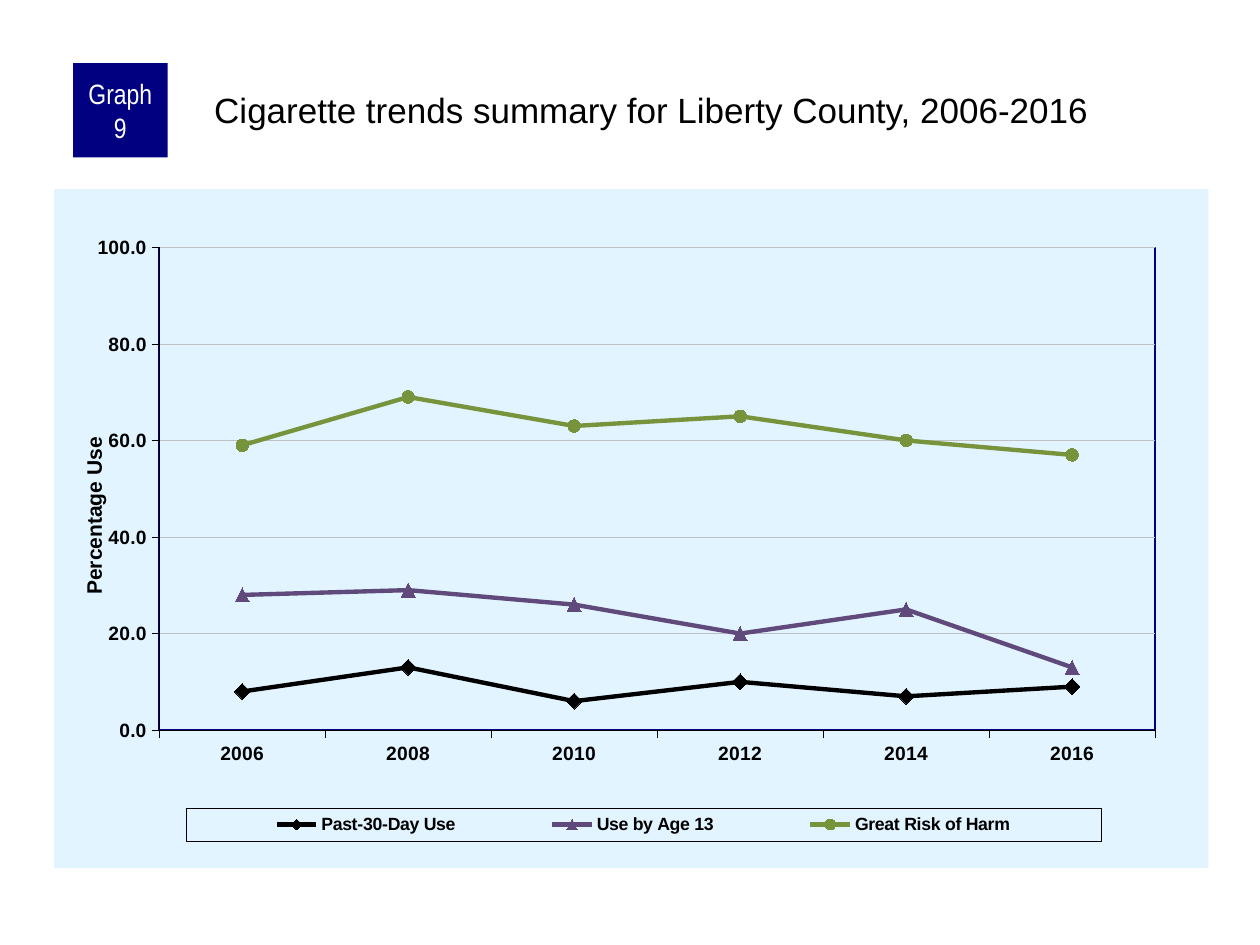
from lxml import etree
from pptx import Presentation
from pptx.chart.data import CategoryChartData
from pptx.dml.color import RGBColor
from pptx.enum import chart as chart_enum, shapes, text
from pptx.oxml import ns
from pptx.util import Inches, Pt

COLORS = {
    "navy": "000080", "white": "FFFFFF", "black": "000000", "panel": "E1F4FF",
    "grid": "C0C0C0", "purple": "604A7B", "green": "77933C",
}
YEARS = ["2006", "2008", "2010", "2012", "2014", "2016"]
MARKER = chart_enum.XL_MARKER_STYLE
SERIES = [
    ("Past-30-Day Use", [8, 13, 6, 10, 7, 9], "black", MARKER.DIAMOND, 9),
    ("Use by Age 13", [28, 29, 26, 20, 25, 13], "purple", MARKER.TRIANGLE, 8),
    ("Great Risk of Harm", [59, 69, 63, 65, 60, 57], "green", MARKER.CIRCLE, 7),
]


def color(name):
    return RGBColor.from_string(COLORS[name])


def set_font(font, size, color_name="black", bold=False, name="Arial"):
    font.name, font.size, font.bold = name, Pt(size), bold
    font.color.rgb = color(color_name)


def set_fill(fill, color_name):
    fill.solid()
    fill.fore_color.rgb = color(color_name)


def set_line(line, color_name, width):
    line.color.rgb = color(color_name)
    line.width = Pt(width)


def set_margins(frame, left, top, right, bottom):
    frame.margin_left, frame.margin_top = Inches(left), Inches(top)
    frame.margin_right, frame.margin_bottom = Inches(right), Inches(bottom)


def set_layout(element, **values):
    """Place a chart part by fractions of the chart area."""
    for old in element.findall(ns.qn("c:layout")):
        element.remove(old)
    layout = etree.Element(ns.qn("c:layout"))
    manual = etree.SubElement(layout, ns.qn("c:manualLayout"))
    if element.tag == ns.qn("c:plotArea"):
        etree.SubElement(manual, ns.qn("c:layoutTarget"), val="inner")
    for key in ("x", "y"):
        etree.SubElement(manual, ns.qn(f"c:{key}Mode"), val="edge")
    for key, value in values.items():
        etree.SubElement(manual, ns.qn(f"c:{key}"), val=str(value))
    before = element.find(ns.qn("c:legendPos"))
    if before is None:
        before = element.find(ns.qn("c:tx"))
    if before is None:
        element.insert(0, layout)
    else:
        before.addnext(layout)


def add_shape_properties(element, fill=None, line=None, width=0):
    """Fill and outline a chart part that has no public format object."""
    properties = etree.Element(ns.qn("c:spPr"))
    if fill:
        solid = etree.SubElement(properties, ns.qn("a:solidFill"))
        etree.SubElement(solid, ns.qn("a:srgbClr"), val=COLORS[fill])
    outline = etree.SubElement(properties, ns.qn("a:ln"), w=str(Pt(width)))
    if line:
        solid = etree.SubElement(outline, ns.qn("a:solidFill"))
        etree.SubElement(solid, ns.qn("a:srgbClr"), val=COLORS[line])
    else:
        etree.SubElement(outline, ns.qn("a:noFill"))
    following = element.find(ns.qn("c:txPr"))
    if following is None:
        element.append(properties)
    else:
        following.addprevious(properties)


def add_badge(slide, left, top, width, height):
    badge = slide.shapes.add_shape(
        shapes.MSO_SHAPE.RECTANGLE, left, top, width, height)
    badge.shadow.inherit = False
    set_fill(badge.fill, "navy")
    badge.line.fill.background()
    frame = badge.text_frame
    set_margins(frame, 0.05, 0, 0.05, 0)
    frame.word_wrap = True
    frame.vertical_anchor = text.MSO_ANCHOR.MIDDLE
    frame.text = "Graph 9"
    frame.paragraphs[0].alignment = text.PP_ALIGN.CENTER
    set_font(frame.paragraphs[0].runs[0].font, 16, "white", name="Arial Narrow")


def place_title(slide, left, top, width, height):
    title = slide.shapes.title
    title.left, title.top, title.width, title.height = left, top, width, height
    frame = title.text_frame
    set_margins(frame, 0.03, 0.03, 0, 0)
    frame.vertical_anchor = text.MSO_ANCHOR.TOP
    frame.text = "Cigarette trends summary for Liberty County, 2006-2016"
    frame.paragraphs[0].alignment = text.PP_ALIGN.LEFT
    set_font(frame.paragraphs[0].runs[0].font, 20)


def format_axes(chart):
    for axis in (chart.category_axis, chart.value_axis):
        axis.major_tick_mark = chart_enum.XL_TICK_MARK.OUTSIDE
        axis.minor_tick_mark = chart_enum.XL_TICK_MARK.NONE
        set_line(axis.format.line, "black", 0.25)
        set_font(axis.tick_labels.font, 11, bold=True)
    value_axis = chart.value_axis
    value_axis.minimum_scale, value_axis.maximum_scale = 0, 100
    value_axis.major_unit = 20
    set_line(value_axis.major_gridlines.format.line, "grid", 0.25)
    value_axis.tick_labels.number_format = "0.0"
    value_axis.tick_labels.number_format_is_linked = False
    title = value_axis.axis_title
    title.text_frame.text = "Percentage Use"
    set_font(title.text_frame.paragraphs[0].runs[0].font, 12, bold=True)
    set_layout(title._element, x=0.02, y=0.36)


def format_legend(chart):
    chart.has_legend = True
    legend = chart.legend
    legend.position = chart_enum.XL_LEGEND_POSITION.RIGHT
    legend.include_in_layout = False
    set_font(legend.font, 10.1, bold=True)
    set_layout(legend._element, x=0.114, y=0.912, w=0.793, h=0.048)
    add_shape_properties(legend._element, line="black", width=0.25)


def add_trend_chart(slide, left, top, width, height):
    data = CategoryChartData(number_format="0.0")
    data.categories = YEARS
    for name, values, *_ in SERIES:
        data.add_series(name, values)
    chart = slide.shapes.add_chart(
        chart_enum.XL_CHART_TYPE.LINE_MARKERS, left, top, width, height, data).chart
    chart.has_title = False
    set_font(chart.font, 8)
    add_shape_properties(chart._chartSpace, fill="panel")
    plot = chart.plots[0]
    plot.vary_by_categories = False
    for series, (_, _, color_name, marker, size) in zip(plot.series, SERIES):
        series.smooth = False
        set_line(series.format.line, color_name, 2.5)
        series.marker.style, series.marker.size = marker, size
        set_fill(series.marker.format.fill, color_name)
        set_line(series.marker.format.line, color_name, 0.75)
    format_axes(chart)
    format_legend(chart)
    plot_area = chart._chartSpace.chart.plotArea
    set_layout(plot_area, x=0.091, y=0.086, w=0.863, h=0.711)
    add_shape_properties(plot_area, line="navy", width=1)


def main():
    presentation = Presentation()
    presentation.slide_width, presentation.slide_height = Inches(10), Inches(7.5)
    slide = presentation.slides.add_slide(presentation.slide_layouts[5])
    add_badge(slide, Inches(0.58), Inches(0.5), Inches(0.75), Inches(0.75))
    place_title(slide, Inches(1.67), Inches(0.67), Inches(7.92), Inches(0.83))
    add_trend_chart(slide, Inches(0.43), Inches(1.5), Inches(9.16), Inches(5.39))
    presentation.save("out.pptx")


if __name__ == "__main__":
    main()
